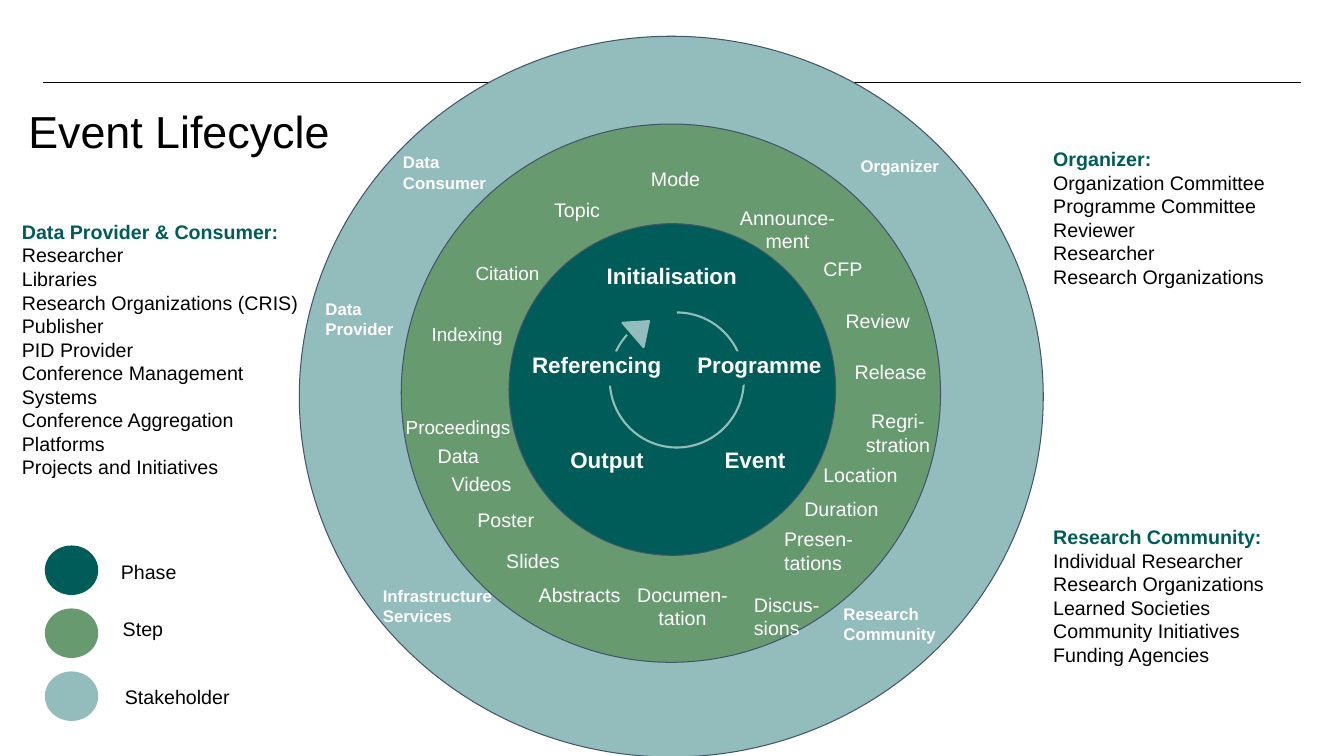
import pptx
import pptx.dml.color
import pptx.enum.shapes
import pptx.enum.text
import pptx.util
import lxml.etree

Pt = pptx.util.Pt
Shape = pptx.enum.shapes.MSO_SHAPE
Align = pptx.enum.text.PP_ALIGN
Anchor = pptx.enum.text.MSO_ANCHOR
TEAL, GREEN, MIST = "005C59", "679A6F", "93BDBC"
SLATE, BLACK, WHITE = "44546A", "000000", "FFFFFF"


def shade(text):
    return pptx.dml.color.RGBColor.from_string(text)


class Sketch:
    """Draw styled elements on the current slide, with lengths in points."""

    def __init__(self, slide, face="Arial", inset=7.2):
        self.slide, self.face, self.inset = slide, face, inset

    def style(self, para, size, ink, bold=False, align=Align.LEFT):
        para.alignment = align
        for run in para.runs:
            font = run.font
            font.name, font.size, font.bold = self.face, Pt(size), bold
            font.color.rgb = shade(ink)

    def title(self, text, x, y, w, h, size):
        box = self.slide.shapes.title
        box.left, box.top, box.width, box.height = Pt(x), Pt(y), Pt(w), Pt(h)
        frame = box.text_frame
        frame.text = text
        frame.vertical_anchor = Anchor.TOP
        frame.paragraphs[0].line_spacing = 0.9
        self.style(frame.paragraphs[0], size, BLACK)

    def rule(self, x, y, end):
        line = self.slide.shapes.add_connector(
            pptx.enum.shapes.MSO_CONNECTOR.STRAIGHT, Pt(x), Pt(y), Pt(end), Pt(y))
        line.line.color.rgb = shade(BLACK)
        line.line.width = Pt(0.75)
        tag = pptx.oxml.ns.qn("a:effectLst")
        lxml.etree.SubElement(line.line._get_or_add_ln().getparent(), tag)

    def shape(self, kind, x, y, w, h, fill, edge, width=0.75):
        item = self.slide.shapes.add_shape(kind, Pt(x), Pt(y), Pt(w), Pt(h))
        item.shadow.inherit = False
        if fill:
            item.fill.solid()
            item.fill.fore_color.rgb = shade(fill)
        else:
            item.fill.background()
        item.line.color.rgb = shade(edge)
        item.line.width = Pt(width)
        return item

    def text(self, text, x, y, w, h, size, ink, bold=False, align=Align.LEFT):
        box = self.slide.shapes.add_textbox(Pt(x), Pt(y), Pt(w), Pt(h))
        frame = box.text_frame
        frame.word_wrap = True
        frame.margin_left = frame.margin_right = Pt(self.inset)
        frame.margin_top = frame.margin_bottom = Pt(self.inset)
        frame.text = text
        for para in frame.paragraphs:
            self.style(para, size, ink, bold, align)
        return frame

    def roster(self, head, names, x, y, w, h):
        frame = self.text("\n".join([head, *names]), x, y, w, h, 14, BLACK)
        self.style(frame.paragraphs[0], 14, TEAL, True)


ROLES = [
    ("Organizer", 607.7, 103.7, 104),
    ("Research\vCommunity", 595.4, 424.1, 104),
    ("Infrastructure Services", 266.4, 411.1, 94),
    ("Data Consumer", 280.8, 101.5, 94),
    ("Data\vProvider", 225.4, 205.9, 94),
]
STEPS = [
    ("Topic", 388.8, 133.9, 58),
    ("Mode", 457.9, 112.3, 58),
    ("CFP", 581, 176.4, 58),
    ("Review", 596.9, 213.8, 67),
    ("Release", 603.4, 249.8, 67),
    ("Location", 581, 323.3, 76),
    ("Duration", 567.4, 347.8, 76),
    ("Presen-\vtations", 553, 369.4, 76),
    ("Discus-\vsions", 531.4, 416.2, 76),
]
MID_STEPS = [
    ("Announce-\vment", 510.5, 139.7, 104, 14),
    ("Regri-\vstration", 603.4, 285.1, 76, 14),
    ("Documen-\vtation", 445, 409, 85, 14),
    ("Abstracts", 371.5, 409, 85, 14),
    ("Slides", 342.7, 385.2, 76, 14),
    ("Poster", 323.3, 355.7, 76, 14),
    ("Videos", 306, 329.8, 76, 14),
    ("Data", 289.4, 309.6, 76, 14),
    ("Proceedings", 277.2, 289.4, 100, 13.5),
    ("Indexing", 283.7, 223.2, 100, 13.5),
    ("Citation", 312.5, 180, 100, 13.5),
]
PHASES = [
    ("Initialisation", 426.2, 180, 118),
    ("Programme", 491, 243.4, 106),
    ("Event", 510.5, 311.8, 74),
    ("Output", 400.3, 311.8, 74),
    ("Referencing", 373, 243.4, 118),
]
RINGS = [
    (213.8, 25.9, 531.4, 514.8, MIST),
    (286.6, 88.6, 385.2, 384.5, GREEN),
    (363.6, 159.8, 233.3, 236.9, TEAL),
]
ROSTERS = [
    ("Data Provider & Consumer:",
     ["Researcher", "Libraries", "Research Organizations (CRIS)", "Publisher",
      "PID Provider", "Conference Management Systems",
      "Conference Aggregation Platforms", "Projects and Initiatives"],
     8.6, 149.8, 223.2, 212.4),
    ("Organizer:",
     ["Organization Committee", "Programme Committee", "Reviewer", "Researcher",
      "Research Organizations"], 745.2, 97.9, 200.9, 123.1),
    ("Research Community:",
     ["Individual Researcher", "Research Organizations", "Learned Societies",
      "Community Initiatives", "Funding Agencies"], 745.2, 367.9, 200.9, 167),
]
KEYS = [("Phase", TEAL, 79.2, 392.4), ("Step", GREEN, 80.6, 433.4),
        ("Stakeholder", MIST, 82.1, 481.7)]


def main():
    deck = pptx.Presentation()
    deck.slide_width, deck.slide_height = Pt(960), Pt(540)
    art = Sketch(deck.slides.add_slide(deck.slide_layouts[5]))
    art.title("Event Lifecycle", 13, 75, 233, 90, 32)
    art.rule(31, 59, 929.5)
    for x, y, w, h, fill in RINGS:
        art.shape(Shape.OVAL, x, y, w, h, fill, SLATE)

    arc = art.shape(Shape.ARC, 435.6, 223.2, 95.8, 96.5, None, MIST, 1.5)
    arc.adjustments[0], arc.adjustments[1] = 162, 133.31
    tip = art.shape(Shape.ISOSCELES_TRIANGLE, 446.4, 226.8, 23, 15.1, MIST, MIST, 1.5)
    tip.rotation = 49.2
    for x in (418.3, 506.2):
        art.shape(Shape.OVAL, x, 251.3, 37.4, 23.8, TEAL, TEAL)

    for text, x, y, w in ROLES:
        art.text(text, x, y, w, 48, 12, WHITE, True)
    for text, x, y, w in STEPS:
        art.text(text, x, y, w, 34.6, 14, WHITE)
    for text, x, y, w, size in MID_STEPS:
        art.text(text, x, y, w, 34.6, size, WHITE, align=Align.CENTER)
    for text, x, y, w in PHASES:
        art.text(text, x, y, w, 34.6, 16, WHITE, True)
    for group in ROSTERS:
        art.roster(*group)
    for row, (text, fill, x, y) in enumerate(KEYS):
        art.shape(Shape.OVAL, 32.4, 390 + 45 * row, 37.4, 34.6, fill, fill)
        art.text(text, x, y, 96, 34.6, 14, BLACK)
    deck.save("out.pptx")


if __name__ == "__main__":
    main()
